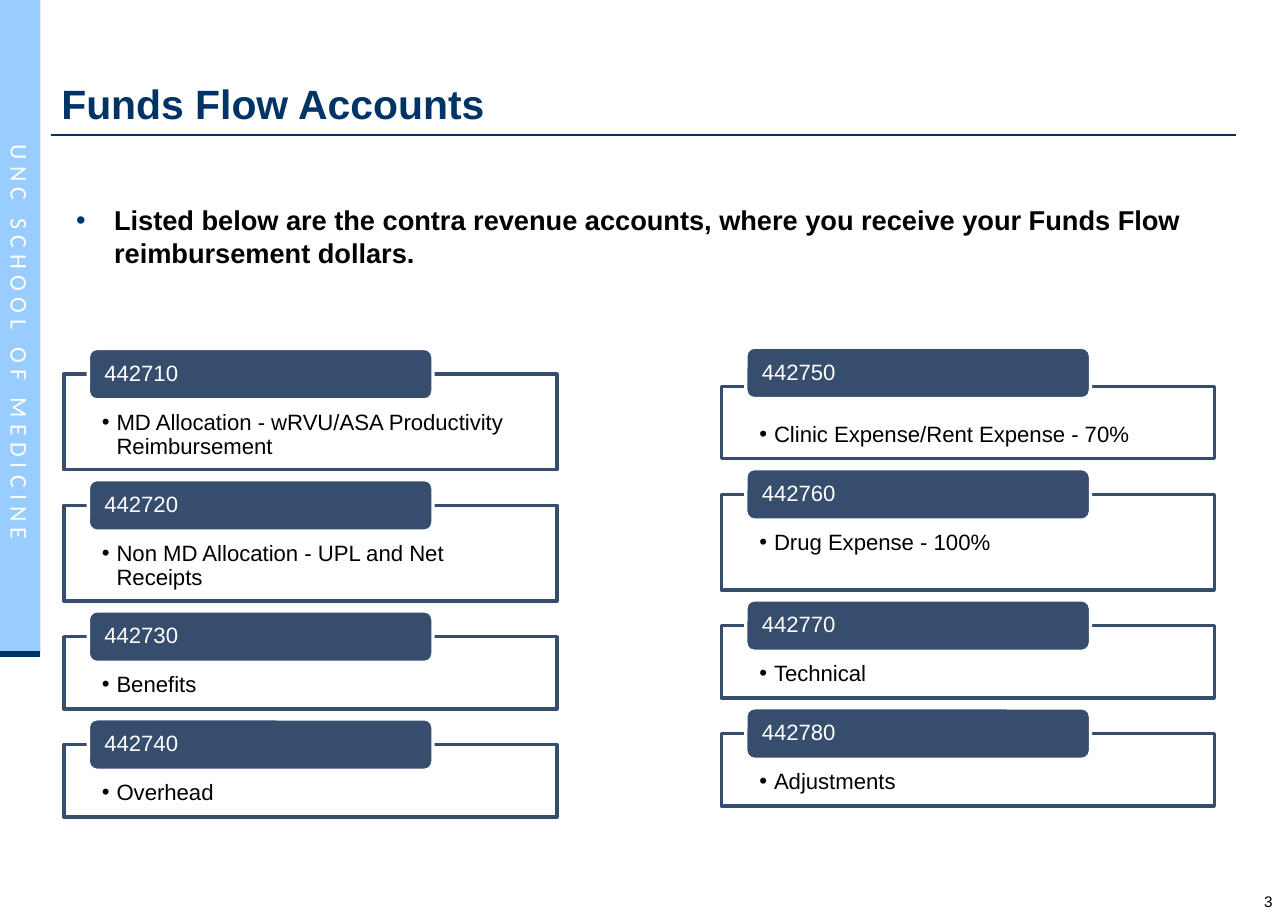
from lxml import etree
from pptx import Presentation
from pptx.dml.color import RGBColor
from pptx.enum import shapes, text
from pptx.oxml.ns import qn
from pptx.util import Inches, Pt

COLORS = {"sky": "99CCFF", "navy": "003366", "slate": "364D6E",
          "white": "FFFFFF", "black": "000000"}
LEFT = [("442710", "MD Allocation - wRVU/ASA Productivity Reimbursement", 0.78),
        ("442720", "Non MD Allocation - UPL and Net Receipts", 0.78),
        ("442730", "Benefits", 0.59),
        ("442740", "Overhead", 0.59)]
RIGHT = [("442750", "Clinic Expense/Rent Expense - 70%", 0.59),
         ("442760", "Drug Expense - 100%", 0.78),
         ("442770", "Technical", 0.59),
         ("442780", "Adjustments", 0.59)]
GAP = 0.29
RISE = 0.21


def color(name):
    return RGBColor.from_string(COLORS[name])


def place(shape, left, top, width, height):
    shape.left, shape.top = Inches(left), Inches(top)
    shape.width, shape.height = Inches(width), Inches(height)


def bullet(par, indent, tint):
    props = par._p.get_or_add_pPr()
    props.set("marL", str(Inches(indent)))
    props.set("indent", str(-Inches(indent)))
    fill = etree.SubElement(props, qn("a:buClr"))
    etree.SubElement(fill, qn("a:srgbClr"), val=COLORS[tint])
    etree.SubElement(props, qn("a:buFont"), typeface="Arial")
    etree.SubElement(props, qn("a:buChar"), char="•")


def write(shape, words, size=13, tint="black", bold=False, face="Arial",
          align="LEFT", anchor="TOP", pads=(0.1, 0.05, 0.1, 0.05),
          wrap=True, lines=1.0, indent=0, dot="black", track=0):
    """Fill a shape with one formatted paragraph; track is in points."""
    frame = shape.text_frame
    frame.word_wrap = wrap
    frame.auto_size = text.MSO_AUTO_SIZE.NONE
    frame.vertical_anchor = getattr(text.MSO_ANCHOR, anchor)
    (frame.margin_left, frame.margin_top,
     frame.margin_right, frame.margin_bottom) = map(Inches, pads)
    par = frame.paragraphs[0]
    if indent:
        bullet(par, indent, dot)
    par.alignment = getattr(text.PP_ALIGN, align)
    par.line_spacing = lines
    par.space_before = Pt(0)
    run = par.add_run()
    run.text = words
    font = run.font
    font.name, font.size, font.bold = face, Pt(size), bold
    font.color.rgb = color(tint)
    if track:
        run._r.get_or_add_rPr().set("spc", str(int(track * 100)))


def block(slide, box, fill, line=None, kind="RECTANGLE"):
    shape = slide.shapes.add_shape(
        getattr(shapes.MSO_SHAPE, kind), *map(Inches, box))
    shape.shadow.inherit = False
    shape.fill.solid()
    shape.fill.fore_color.rgb = color(fill)
    if line:
        shape.line.color.rgb = color(line)
        shape.line.width = Pt(2)
    else:
        shape.line.fill.background()
    return shape


def rule(slide, left, right, top, width):
    line = slide.shapes.add_connector(
        shapes.MSO_CONNECTOR.STRAIGHT,
        *map(Inches, (left, top, right, top)))
    line.line.color.rgb = color("navy")
    line.line.width = Pt(width)
    etree.SubElement(line._element.spPr, qn("a:effectLst"))


def label(slide, box, words, turn=0, **form):
    shape = slide.shapes.add_textbox(*map(Inches, box))
    shape.rotation = turn
    write(shape, words, **form)


def account(slide, left, top, height, code, note, rise):
    """Draw a framed note with its account code on a tab above."""
    card = block(slide, (left, top, 4.02, height), "white", "slate")
    write(card, note, pads=(0.31, 0.3, 0.31, 0.1), lines=0.9, indent=0.12)
    tab = block(slide, (left + 0.2, top - rise, 2.81, 0.42),
                "slate", "white", "ROUNDED_RECTANGLE")
    write(tab, code, tint="white", anchor="MIDDLE",
          pads=(0.11, 0, 0.11, 0), lines=0.9)


def column(slide, left, top, rows, first=RISE):
    """Stack accounts; first is the rise of the topmost tab."""
    for index, (code, note, height) in enumerate(rows):
        account(slide, left, top, height, code, note,
                RISE if index else first)
        top += height + GAP


def main():
    deck = Presentation()
    deck.slide_width, deck.slide_height = Inches(10.5), Inches(7.5)
    slide = deck.slides.add_slide(deck.slide_layouts[1])

    block(slide, (0, 0, 0.33, 5.33), "sky")
    rule(slide, 0, 0.33, 5.33, 3.5)
    rule(slide, 0.42, 10.08, 1.1, 1.5)
    label(slide, (10.24, 7.27, 0.2, 0.15), "3", size=9, align="CENTER",
          pads=(0, 0, 0, 0), wrap=False)
    label(slide, (-2.05, 2.62, 4.42, 0.34), "UNC SCHOOL OF MEDICINE",
          turn=90, size=14, face="Calibri", tint="white", align="CENTER",
          track=3.6)

    title, body = slide.placeholders
    place(title, 0.5, 0.18, 9.5, 0.91)
    write(title, "Funds Flow Accounts", size=24, tint="navy", bold=True,
          anchor="BOTTOM", pads=(0, 0.05, 0, 0.05))
    place(body, 0.52, 1.61, 9.48, 0.96)
    write(body, "Listed below are the contra revenue accounts, where you "
          "receive your Funds Flow reimbursement dollars.",
          size=16, bold=True, indent=0.31, dot="navy")

    column(slide, 0.52, 3.05, LEFT)
    column(slide, 5.88, 3.15, RIGHT, first=0.32)
    deck.save("out.pptx")


if __name__ == "__main__":
    main()
